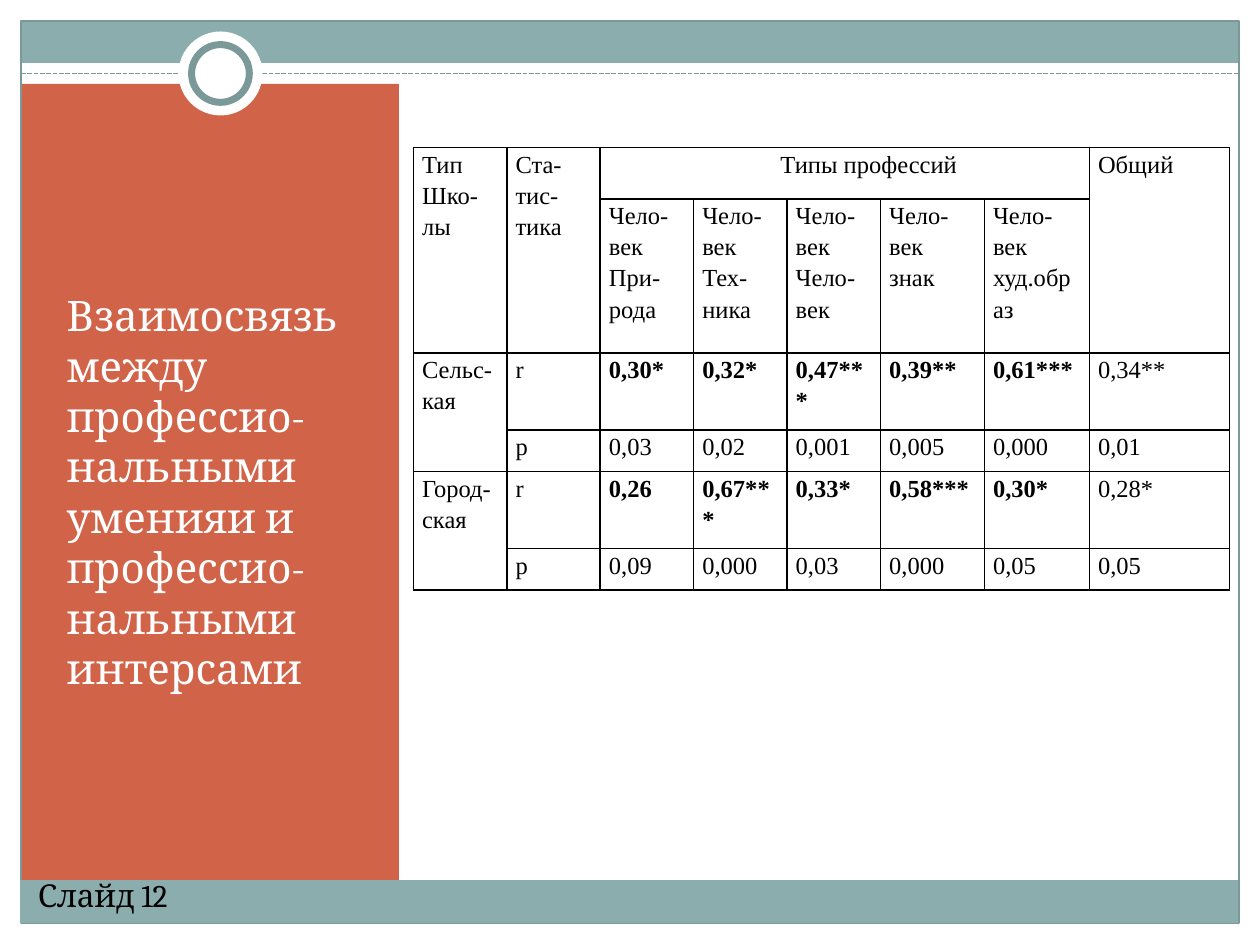
from lxml import etree
from pptx import Presentation
from pptx import util as u
from pptx.dml.color import RGBColor
from pptx.enum import dml, shapes, text
from pptx.oxml import parse_xml
from pptx.oxml.ns import nsdecls, qn


def color(value):
    return RGBColor.from_string(value)


def add_panel(kind, box, fill=None, line=None, width=0):
    shape = slide.shapes.add_shape(kind, *[u.Pt(value) for value in box])
    shape.shadow.inherit = False
    if fill:
        shape.fill.solid()
        shape.fill.fore_color.rgb = color(fill)
    else:
        shape.fill.background()
    if line:
        shape.line.color.rgb = color(line)
        shape.line.width = u.Pt(width)
    else:
        shape.line.fill.background()


WHITE, BLACK, TEAL, EDGE, RED = "FFFFFF", "000000", "8CADAE", "7C999A", "D16349"
RECTANGLE, OVAL = shapes.MSO_SHAPE.RECTANGLE, shapes.MSO_SHAPE.OVAL

presentation = Presentation()
presentation.slide_width, presentation.slide_height = u.Pt(720), u.Pt(540)
slide = presentation.slides.add_slide(presentation.slide_layouts[6])

add_panel(RECTANGLE, (12, 12, 696, 24), TEAL)
for margin in [(0, 528, 720, 12), (708, 0, 12, 540), (0, 0, 720, 9.5), (0, 0, 12, 540)]:
    add_panel(RECTANGLE, margin, WHITE)
add_panel(RECTANGLE, (12, 48, 216, 462), RED)
add_panel(RECTANGLE, (12, 12, 696, 515.5), None, EDGE, 0.75)

divider = slide.shapes.add_connector(
    shapes.MSO_CONNECTOR.STRAIGHT, u.Pt(12), u.Pt(42), u.Pt(708), u.Pt(42))
divider.line.color.rgb = color(EDGE)
divider.line.width = u.Pt(0.9)
divider.line.dash_style = dml.MSO_LINE.SQUARE_DOT
etree.SubElement(divider.element.spPr, qn("a:effectLst"))

add_panel(OVAL, (102, 18, 48, 48), WHITE)
add_panel(OVAL, (109.5, 25.5, 33, 33), WHITE, EDGE, 4)
add_panel(RECTANGLE, (11.5, 503, 696, 24.5), TEAL)

captions = [
    ("Взаимосвязь между профессио-нальными уменияи и профессио-нальными интерсами",
     (31, 162, 186, 304.5), 24, WHITE, True),
    ("Слайд 12", (14.5, 497, 113, 29), 18, BLACK, False),
]
for caption, box, size, ink, wrap in captions:
    frame = slide.shapes.add_textbox(*[u.Pt(value) for value in box]).text_frame
    frame.word_wrap = wrap
    paragraph = frame.paragraphs[0]
    paragraph.text = caption
    paragraph.font.name = "Cambria"
    paragraph.font.size = u.Pt(size)
    paragraph.font.color.rgb = color(ink)

rows = [
    ["Тип\nШко-лы", "Ста-тис-\nтика", "Типы профессий", "", "", "", "", "Общий"],
    ["", "", "Чело-век\nПри-рода", "Чело-век\nТех-ника", "Чело-век\nЧело-век",
     "Чело-век\nзнак", "Чело-век\nхуд.образ", ""],
    ["Сельс-кая", "r", "0,30*", "0,32*", "0,47***", "0,39**", "0,61***", "0,34**"],
    ["", "p", "0,03", "0,02", "0,001", "0,005", "0,000", "0,01"],
    ["Город-\nская", "r", "0,26", "0,67***", "0,33*", "0,58***", "0,30*", "0,28*"],
    ["", "p", "0,09", "0,000", "0,03", "0,000", "0,05", "0,05"],
]
widths = [53.4] * 5 + [59.4, 60, 80]
heights = [29.3, 88, 44, 23.8, 44, 23.8]
table = slide.shapes.add_table(
    len(rows), len(widths), u.Pt(236.2), u.Pt(84.4),
    u.Pt(sum(widths)), u.Pt(sum(heights))).table
table.first_row = table.horz_banding = False
for column, width in zip(table.columns, widths):
    column.width = u.Pt(width)
for row, height in zip(table.rows, heights):
    row.height = u.Pt(height)

for row_index, row in enumerate(rows):
    for column_index, content in enumerate(row):
        cell = table.cell(row_index, column_index)
        cell.margin_left = cell.margin_right = u.Pt(5)
        cell.margin_top = cell.margin_bottom = 0
        cell.text = content
        for paragraph in cell.text_frame.paragraphs:
            paragraph.alignment = text.PP_ALIGN.JUSTIFY
            paragraph.line_spacing = 1.15
            paragraph.font.name = "Times New Roman"
            paragraph.font.size = u.Pt(14)
            paragraph.font.bold = row_index in (2, 4) and 2 <= column_index <= 6
            paragraph.font.color.rgb = color(BLACK)
        properties = cell._tc.get_or_add_tcPr()
        for side in ("lnL", "lnR", "lnT", "lnB"):
            properties.append(parse_xml(
                f'<a:{side} {nsdecls("a")} w="12700"><a:solidFill>'
                f'<a:srgbClr val="{BLACK}"/></a:solidFill></a:{side}>'))
        cell.fill.background()

table.cell(0, 2).margin_left = u.Pt(103)
for first, last in [((0, 0), (1, 0)), ((0, 1), (1, 1)), ((0, 2), (0, 6)),
                    ((0, 7), (1, 7)), ((2, 0), (3, 0)), ((4, 0), (5, 0))]:
    table.cell(*first).merge(table.cell(*last))

presentation.save("out.pptx")
